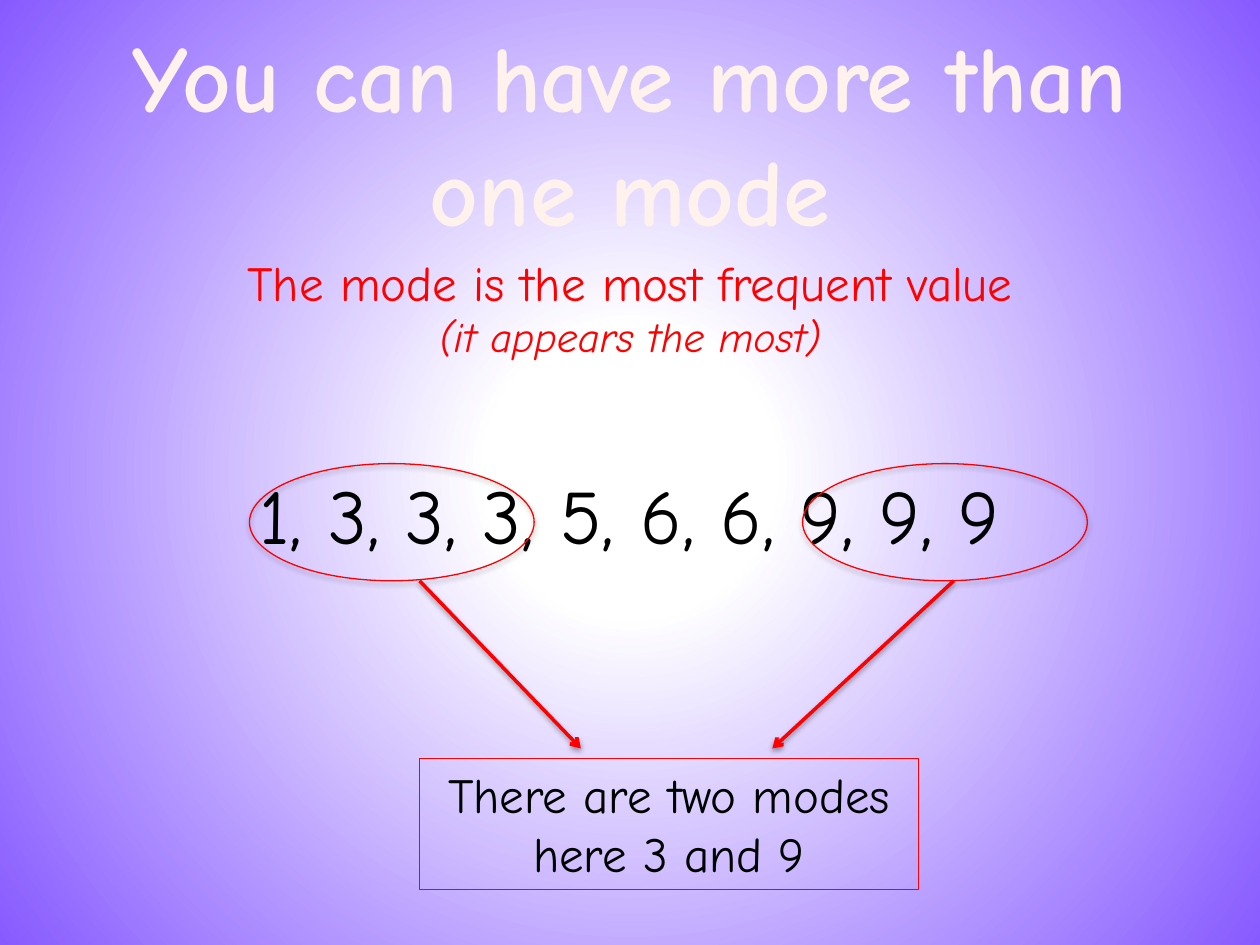
from pptx import Presentation
from pptx.dml.color import RGBColor
from pptx.enum import shapes, text
from pptx.oxml import parse_xml
from pptx.oxml.ns import nsdecls, qn
from pptx.util import Inches, Pt

COLORS = {
    "center": "FFFFFF",
    "edge": "875AFF",
    "title": "FFF2ED",
    "title outline": "EB6A00",
    "accent": "FF0000",
    "ink": "000000",
}
FONT = "Comic Neue"


def rgb(name):
    return RGBColor.from_string(COLORS[name])


def drawing(tag, content="", **attributes):
    """Make a DrawingML element with the given inner XML."""
    listed = "".join(f' {key}="{value}"' for key, value in attributes.items())
    return parse_xml(f'<a:{tag} {nsdecls("a")}{listed}>{content}</a:{tag}>')


def place(part, box):
    part.left, part.top, part.width, part.height = (Inches(n) for n in box)


def style_run(run, size, color, bold=None, italic=None):
    font = run.font
    font.name, font.size = FONT, Pt(size)
    font.bold, font.italic = bold, italic
    font.color.rgb = rgb(color)


def style_line(part, width):
    part.line.color.rgb = rgb("accent")
    part.line.width = Pt(width)


def soft_shadow(alpha, distance):
    shade = f'<a:srgbClr val="{COLORS["ink"]}"><a:alpha val="{alpha * 1000}"/></a:srgbClr>'
    return drawing("outerShdw", shade, blurRad=Pt(3.1), dist=Pt(distance),
                   dir=5400000, rotWithShape=0)


def paint_background(slide):
    """Fill the slide with a radial gradient."""
    slide.background.fill.gradient()
    gradient = slide.element.find(".//" + qn("a:gradFill"))
    for child in list(gradient):
        gradient.remove(child)
    gradient.append(drawing("gsLst", f"""
        <a:gs pos="18000"><a:srgbClr val="{COLORS['center']}"><a:alpha val="81000"/></a:srgbClr></a:gs>
        <a:gs pos="100000"><a:srgbClr val="{COLORS['edge']}"/></a:gs>"""))
    gradient.append(drawing(
        "path", '<a:fillToRect l="50000" t="50000" r="50000" b="50000"/>', path="circle"))


def add_title(slide, box):
    title = slide.shapes.title
    place(title, box)
    frame = title.text_frame
    frame.text = "You can have more than one mode"
    frame.auto_size = text.MSO_AUTO_SIZE.NONE
    frame.vertical_anchor = text.MSO_ANCHOR.MIDDLE
    paragraph = frame.paragraphs[0]
    paragraph.alignment = text.PP_ALIGN.CENTER
    run = paragraph.runs[0]
    style_run(run, 54, "title", bold=True)
    outline = f'<a:solidFill><a:srgbClr val="{COLORS["title outline"]}"/></a:solidFill>'
    run.font._element.insert(0, drawing("ln", outline, w=Pt(2.48)))


def add_definition(slide, box):
    """Place the definition of the mode and the example numbers."""
    body = slide.placeholders[1]
    place(body, box)
    frame = body.text_frame
    frame.text = ("The mode is the most frequent value\v(it appears the most)\n"
                  "1, 3, 3, 3, 5, 6, 6, 9, 9, 9")
    frame.auto_size = text.MSO_AUTO_SIZE.NONE
    frame.margin_top = Inches(0.81)
    definition, numbers = frame.paragraphs
    for paragraph, gap in ((definition, 0), (numbers, 61)):
        paragraph.alignment = text.PP_ALIGN.CENTER
        paragraph.space_before = Pt(gap)
        properties = paragraph._p.get_or_add_pPr()
        properties.set("marL", "0")
        properties.set("indent", "0")
        properties.append(drawing("buNone"))
    style_run(definition.runs[0], 28, "accent")
    style_run(definition.runs[1], 24, "accent", italic=True)
    style_run(numbers.runs[0], 44, "ink")


def add_ring(slide, box):
    ring = slide.shapes.add_shape(
        shapes.MSO_SHAPE.OVAL, *(Inches(n) for n in box))
    ring.fill.background()
    style_line(ring, 0.75)
    ring.shadow.inherit = False
    ring.element.spPr.find(qn("a:effectLst")).append(soft_shadow(35, 1.8))


def add_arrow(slide, start, end):
    arrow = slide.shapes.add_connector(
        shapes.MSO_CONNECTOR.STRAIGHT, *(Inches(n) for n in (*start, *end)))
    style_line(arrow, 2)
    arrow.line._get_or_add_ln().append(drawing("tailEnd", type="arrow"))
    effects = drawing("effectLst")
    effects.append(soft_shadow(38, 1.6))
    arrow._element.spPr.append(effects)


def add_conclusion(slide, box):
    conclusion = slide.shapes.add_shape(
        shapes.MSO_SHAPE.RECTANGLE, *(Inches(n) for n in box))
    conclusion.fill.background()
    style_line(conclusion, 0.75)
    conclusion.shadow.inherit = False
    frame = conclusion.text_frame
    frame.text = "There are two modes here 3 and 9"
    frame.word_wrap = True
    frame.auto_size = text.MSO_AUTO_SIZE.SHAPE_TO_FIT_TEXT
    frame.vertical_anchor = text.MSO_ANCHOR.TOP
    paragraph = frame.paragraphs[0]
    paragraph.alignment = text.PP_ALIGN.CENTER
    style_run(paragraph.runs[0], 28, "ink")


def main():
    deck = Presentation()
    deck.slide_width, deck.slide_height = Inches(10), Inches(7.5)
    slide = deck.slides.add_slide(deck.slide_layouts[1])
    paint_background(slide)
    add_title(slide, (0.5, 0, 9, 2.09))
    add_definition(slide, (0, 1.19, 10, 6.19))
    for left in (1.98, 6.37):
        add_ring(slide, (left, 3.68, 2.26, 0.93))
    for start, end in ((7.57, 6.13), (3.33, 4.61)):
        add_arrow(slide, (start, 4.61), (end, 5.94))
    add_conclusion(slide, (3.33, 6.02, 3.96, 1.04))
    deck.save("out.pptx")


if __name__ == "__main__":
    main()
